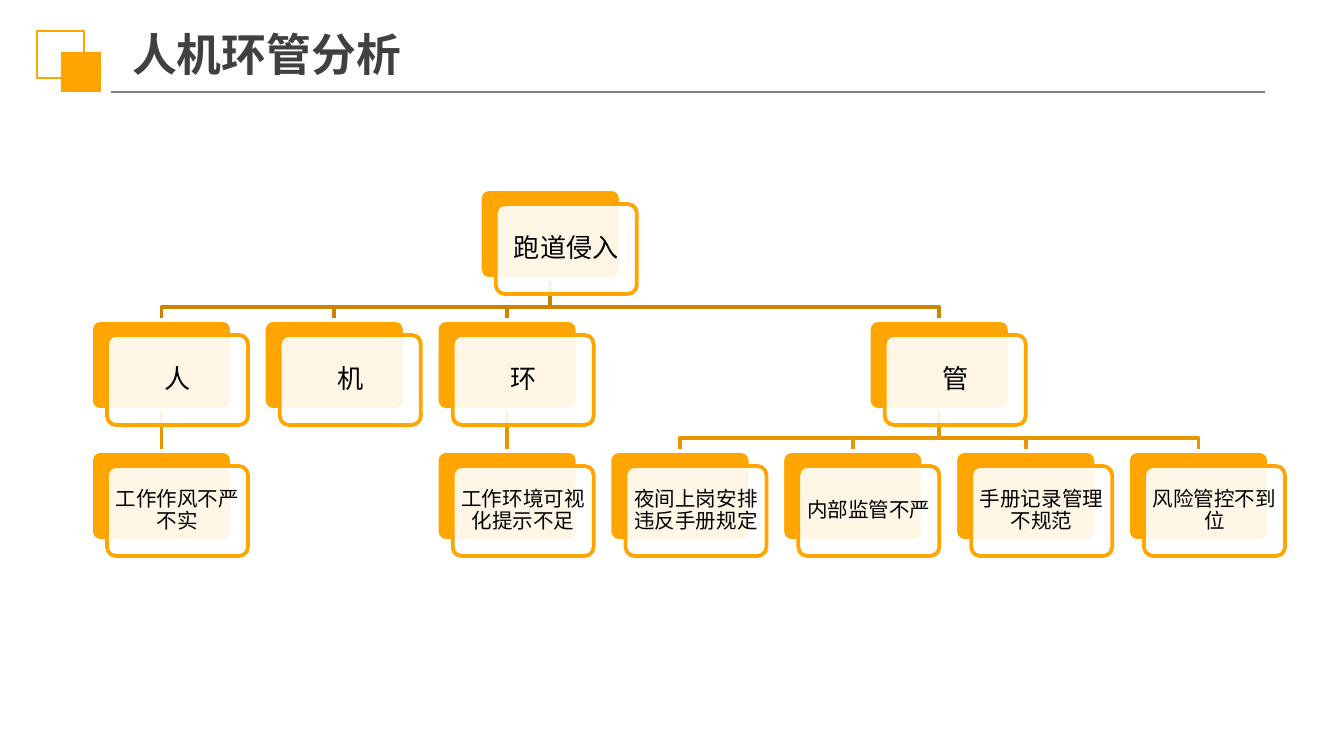
import dataclasses

import lxml.etree
import pptx
import pptx.dml.color
import pptx.enum.shapes
import pptx.enum.text
import pptx.oxml.ns
import pptx.util

PX = 914400 / 134.4
RECT = pptx.enum.shapes.MSO_SHAPE.RECTANGLE
ROUNDED = pptx.enum.shapes.MSO_SHAPE.ROUNDED_RECTANGLE
STRAIGHT = pptx.enum.shapes.MSO_CONNECTOR.STRAIGHT
MIDDLE = pptx.enum.text.MSO_ANCHOR.MIDDLE
LEFT = pptx.enum.text.PP_ALIGN.LEFT
CENTER = pptx.enum.text.PP_ALIGN.CENTER


@dataclasses.dataclass(frozen=True)
class Theme:
    """Hold the font, colours, type sizes and line widths."""
    font: str = "Noto Sans CJK SC"
    accent: str = "FFA500"
    branches: tuple = ("CC8400", "E79600")
    paper: str = "FFFFFF"
    ink: str = "000000"
    heading: str = "404040"
    rule: str = "808080"
    title_size: int = 24
    label_sizes: tuple = (14, 14, 11)
    thin: float = 0.75
    outline: float = 1
    thick: float = 2


@dataclasses.dataclass
class Cause:
    """Describe one node of the cause tree."""
    label: str
    children: tuple = ()
    level: int = 0
    column: float = 0


THEME = Theme()
TREE = Cause("跑道侵入", (
    Cause("人", (Cause("工作作风不严不实"),)),
    Cause("机"),
    Cause("环", (Cause("工作环境可视化提示不足"),)),
    Cause("管", (
        Cause("夜间上岗安排违反手册规定"),
        Cause("内部监管不严"),
        Cause("手册记录管理不规范"),
        Cause("风险管控不到位"),
    )),
))
CARD_W, CARD_H, SHIFT_X, SHIFT_Y = 141, 90, 16, 15


def emu(px):
    """Turn px into EMU."""
    return pptx.util.Emu(round(px * PX))


def rgb(color):
    """Turn a hex string into a colour."""
    return pptx.dml.color.RGBColor.from_string(color)


def apply(target, values):
    """Set each format value on the target."""
    for key, value in values.items():
        setattr(target, key, value)


def stroke(line, color, width):
    """Give a line its colour and width in points."""
    line.color.rgb = rgb(color)
    line.width = pptx.util.Pt(width)


def write(frame, text, size, color, bold, align, spacing, insets):
    """Write one formatted paragraph into a text frame."""
    side, end = map(emu, insets)
    apply(frame, {"word_wrap": True, "vertical_anchor": MIDDLE,
                  "auto_size": pptx.enum.text.MSO_AUTO_SIZE.NONE,
                  "margin_left": side, "margin_right": side,
                  "margin_top": end, "margin_bottom": end})
    paragraph = frame.paragraphs[0]
    apply(paragraph, {"alignment": align, "line_spacing": spacing})
    run = paragraph.add_run()
    run.text = text
    apply(run.font, {"name": THEME.font, "size": pptx.util.Pt(size), "bold": bold})
    run.font.color.rgb = rgb(color)
    lxml.etree.SubElement(run._r.get_or_add_rPr(), pptx.oxml.ns.qn("a:ea"),
                          typeface=THEME.font)


def add_panel(slide, kind, box, fill, line, width):
    """Add a shape without shadow, with an optional fill and outline."""
    panel = slide.shapes.add_shape(kind, *map(emu, box))
    panel.shadow.inherit = False
    if fill:
        panel.fill.solid()
        panel.fill.fore_color.rgb = rgb(fill)
    else:
        panel.fill.background()
    if line:
        stroke(panel.line, line, width)
    else:
        panel.line.fill.background()
    return panel


def add_rule(slide, start, end, color, width):
    """Add a straight connector without shadow."""
    rule = slide.shapes.add_connector(STRAIGHT, *map(emu, (*start, *end)))
    stroke(rule.line, color, width)
    lxml.etree.SubElement(rule._element.spPr, pptx.oxml.ns.qn("a:effectLst"))
    return rule


def add_header(slide, left, top, width):
    """Place the emblem squares, the title and the rule below it."""
    add_rule(slide, (left + 74, top + 61), (left + width, top + 61),
             THEME.rule, THEME.thin)
    add_panel(slide, RECT, (left, top, 47, 47), None, THEME.accent, THEME.outline)
    add_panel(slide, RECT, (left + 24, top + 21, 40, 40), THEME.accent, None, 0)
    title = slide.shapes.title
    apply(title, {"left": emu(left + 95), "top": emu(top - 5),
                  "width": emu(710), "height": emu(55)})
    write(title.text_frame, "人机环管分析", THEME.title_size, THEME.heading,
          True, LEFT, 1.0, (0, 7))


def arrange(cause, level, first):
    """Give leaves successive columns, centre parents, return the next column."""
    cause.level, cause.column = level, first
    after = first
    for child in cause.children:
        after = arrange(child, level + 1, after)
    if cause.children:
        cause.column = (cause.children[0].column + cause.children[-1].column) / 2
    return max(after, first + 1)


def descend(cause):
    """List a cause and everything below it."""
    return [cause] + [below for child in cause.children for below in descend(child)]


def add_branch(slide, start, end, color):
    """Draw an elbow from a parent's foot to a child's top."""
    (start_x, start_y), (end_x, end_y) = start, end
    bend = end_y - 13
    builder = slide.shapes.build_freeform(emu(start_x), emu(start_y))
    builder.add_line_segments([tuple(map(emu, point)) for point in
                               ((start_x, bend), (end_x, bend), end)], close=False)
    branch = builder.convert_to_shape()
    branch.shadow.inherit = False
    branch.fill.background()
    stroke(branch.line, color, THEME.thick)


def add_card(slide, left, top, cause):
    """Place a filled backing and a translucent labelled card; return the backing."""
    backing = add_panel(slide, ROUNDED, (left, top, CARD_W, CARD_H),
                        THEME.accent, THEME.paper, THEME.thick)
    face = add_panel(slide, ROUNDED, (left + SHIFT_X, top + SHIFT_Y, CARD_W, CARD_H),
                     THEME.paper, THEME.accent, THEME.thick)
    for panel in (backing, face):
        panel.adjustments[0] = 0.1
    fill = face._element.spPr.find(pptx.oxml.ns.qn("a:solidFill"))
    lxml.etree.SubElement(fill[0], pptx.oxml.ns.qn("a:alpha"), val="90000")
    write(face.text_frame, cause.label, THEME.label_sizes[cause.level], THEME.ink,
          False, CENTER, 0.9, (5, 5))
    return backing


def add_tree(slide, left, top, width, height):
    """Fit the cause tree into the box, branches behind cards."""
    columns = arrange(TREE, 0, 0)
    causes = descend(TREE)
    step_x = (width - CARD_W - SHIFT_X) / (columns - 1)
    step_y = (height - CARD_H - SHIFT_Y) / max(cause.level for cause in causes)
    corners = {cause.label: (left + cause.column * step_x, top + cause.level * step_y)
               for cause in causes}
    stems = []
    for parent in causes:
        x, y = corners[parent.label]
        foot = (x + CARD_W / 2, y + CARD_H)
        for child in parent.children:
            x, y = corners[child.label]
            head = (x + CARD_W / 2, y)
            color = THEME.branches[parent.level]
            if child.column == parent.column:
                stem = add_rule(slide, foot, head, color, THEME.thick)
                stems.append((stem, parent.label, child.label))
            else:
                add_branch(slide, foot, head, color)
    backings = {cause.label: add_card(slide, *corners[cause.label], cause)
                for cause in causes}
    for stem, parent, child in stems:
        stem.begin_connect(backings[parent], 2)
        stem.end_connect(backings[child], 0)


def main():
    """Build and save the slide."""
    deck = pptx.Presentation()
    apply(deck, {"slide_width": emu(1344), "slide_height": emu(756)})
    slide = deck.slides.add_slide(deck.slide_layouts[5])
    add_header(slide, 37, 31, 1228)
    add_tree(slide, 91, 189, 1194, 367)
    deck.save("out.pptx")


if __name__ == "__main__":
    main()
